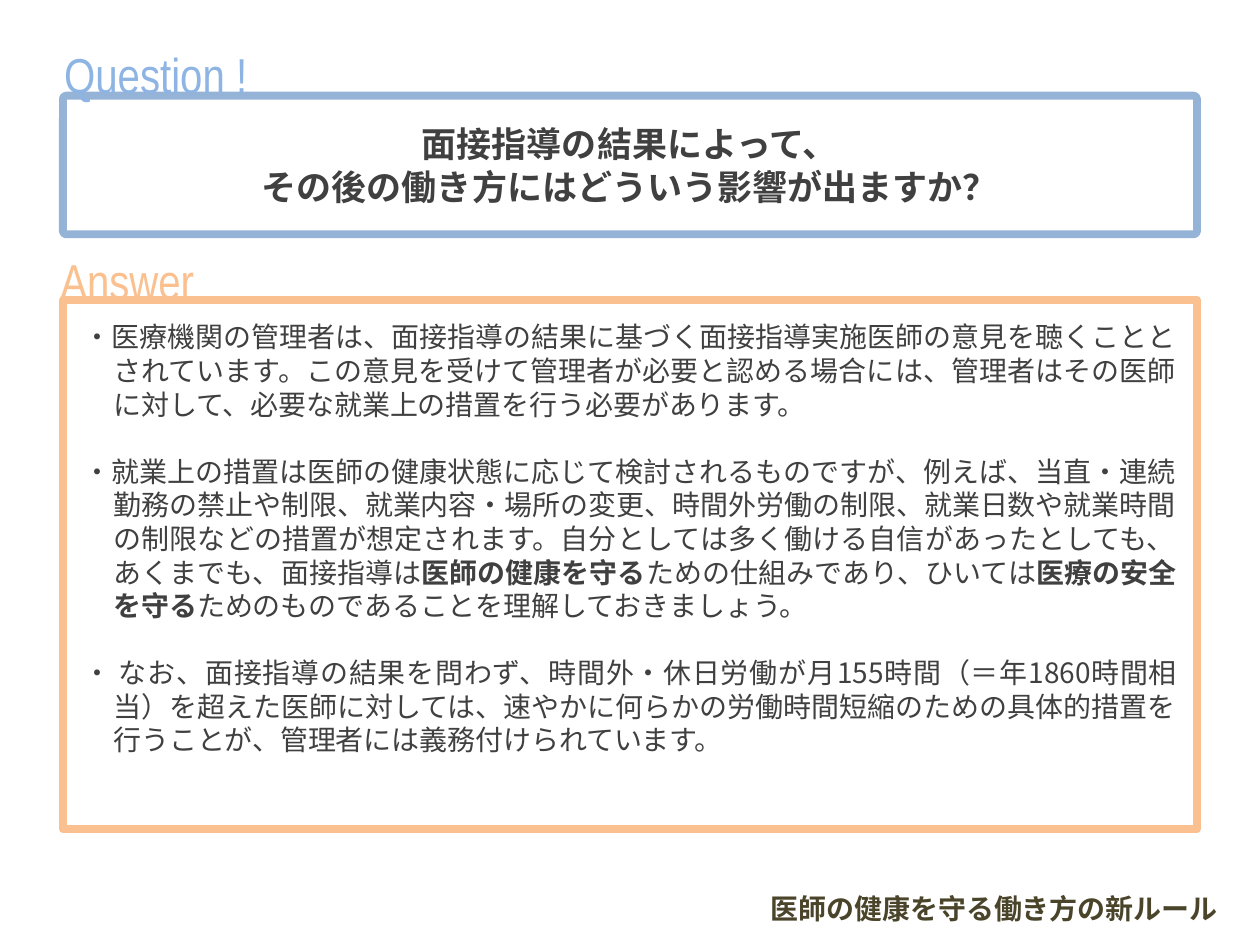
from lxml import etree
from pptx import Presentation
from pptx.dml.color import RGBColor
from pptx.enum import shapes, text
from pptx.oxml.ns import qn
from pptx.util import Inches, Pt

COLORS = {
    "question_border": "95B3D7",
    "question_label": "8EB4E3",
    "answer": "FAC090",
    "body": "404040",
    "footer": "4A452A",
}
LABEL_FONT = "Arial Narrow"
BODY_FONT = "Noto Sans CJK JP"
LINE_HEIGHT = 1.2

QUESTION = ["面接指導の結果によって、", "その後の働き方にはどういう影響が出ますか？"]
# Each paragraph is a list of runs; every second run is bold.
ANSWERS = [
    ["・医療機関の管理者は、面接指導の結果に基づく面接指導実施医師の意見を聴くこととされています。"
     "この意見を受けて管理者が必要と認める場合には、管理者はその医師に対して、"
     "必要な就業上の措置を行う必要があります。"],
    ["・就業上の措置は医師の健康状態に応じて検討されるものですが、例えば、当直・連続勤務の禁止や制限、"
     "就業内容・場所の変更、時間外労働の制限、就業日数や就業時間の制限などの措置が想定されます。"
     "自分としては多く働ける自信があったとしても、あくまでも、面接指導は",
     "医師の健康を守る",
     "ための仕組みであり、ひいては",
     "医療の安全を守る",
     "ためのものであることを理解しておきましょう。"],
    ["・ なお、面接指導の結果を問わず、時間外・休日労働が月155時間（＝年1860時間相当）を超えた医師に対しては、"
     "速やかに何らかの労働時間短縮のための具体的措置を行うことが、管理者には義務付けられています。"],
]


def format_run(run, size, font, color, bold=False):
    run.font.size = Pt(size)
    run.font.name = font
    run.font.bold = bold
    run.font.color.rgb = RGBColor.from_string(COLORS[color])
    east_asian = etree.SubElement(run._r.get_or_add_rPr(), qn("a:ea"))
    east_asian.set("typeface", font)


def set_hanging_indent(paragraph, inches):
    properties = paragraph._p.get_or_add_pPr()
    properties.set("marL", str(Inches(inches)))
    properties.set("indent", str(-Inches(inches)))


def add_round_box(slide, left, top, width, height, corner, border=None):
    """Add an unfilled rounded rectangle, with a thick border if a colour is named."""
    shape = slide.shapes.add_shape(
        shapes.MSO_SHAPE.ROUNDED_RECTANGLE,
        Inches(left), Inches(top), Inches(width), Inches(height))
    shape.adjustments[0] = corner
    shape.shadow.inherit = False
    shape.fill.background()
    if border:
        shape.line.color.rgb = RGBColor.from_string(COLORS[border])
        shape.line.width = Pt(4.5)
    else:
        shape.line.fill.background()
    shape.text_frame.word_wrap = True
    shape.text_frame.vertical_anchor = text.MSO_ANCHOR.TOP
    return shape


def add_label(slide, wording, top, width, height, corner, color):
    frame = add_round_box(slide, 0.38, top, width, height, corner).text_frame
    frame.text = wording
    frame.auto_size = text.MSO_AUTO_SIZE.SHAPE_TO_FIT_TEXT
    paragraph = frame.paragraphs[0]
    paragraph.alignment = text.PP_ALIGN.LEFT
    paragraph.space_after = Pt(6)
    format_run(paragraph.runs[0], 28, LABEL_FONT, color)


def add_question(slide):
    frame = add_round_box(slide, 0.5, 0.76, 9, 1.1, 0.025, "question_border").text_frame
    frame.vertical_anchor = text.MSO_ANCHOR.MIDDLE
    frame.text = "\n".join(QUESTION)
    for paragraph in frame.paragraphs:
        paragraph.alignment = text.PP_ALIGN.CENTER
        paragraph.line_spacing = Pt(20 * LINE_HEIGHT)
        set_hanging_indent(paragraph, 0.17)
        format_run(paragraph.runs[0], 20, BODY_FONT, "body", bold=True)


def add_answer(slide):
    frame = add_round_box(slide, 0.5, 2.38, 9, 4.2, 0, "answer").text_frame
    frame.margin_left = frame.margin_right = Inches(0.16)
    frame.margin_top = frame.margin_bottom = Inches(0.16)
    for index, pieces in enumerate(ANSWERS):
        paragraph = frame.add_paragraph() if index else frame.paragraphs[0]
        paragraph.alignment = text.PP_ALIGN.JUSTIFY
        paragraph.line_spacing = Pt(16 * LINE_HEIGHT)
        if index:
            paragraph.space_before = Pt(16 * LINE_HEIGHT)
        set_hanging_indent(paragraph, 0.24)
        for position, piece in enumerate(pieces):
            run = paragraph.add_run()
            run.text = piece
            format_run(run, 16, BODY_FONT, "body", bold=position % 2 == 1)


def add_footer(slide):
    box = slide.shapes.add_textbox(Inches(6.02), Inches(7.06), Inches(3.82), Inches(0.26))
    frame = box.text_frame
    frame.word_wrap = True
    frame.text = "医師の健康を守る働き方の新ルール"
    paragraph = frame.paragraphs[0]
    paragraph.line_spacing = 0.9
    format_run(paragraph.runs[0], 16, BODY_FONT, "footer", bold=True)


def main():
    presentation = Presentation()
    presentation.slide_width = Inches(10)
    presentation.slide_height = Inches(7.5)
    slide = presentation.slides.add_slide(presentation.slide_layouts[6])
    add_question(slide)
    add_label(slide, "Question !", 0.27, 4.56, 0.63, 0.17, "question_label")
    add_answer(slide)
    add_label(slide, "Answer", 1.94, 5.49, 0.57, 0, "answer")
    add_footer(slide)
    presentation.save("out.pptx")


if __name__ == "__main__":
    main()
